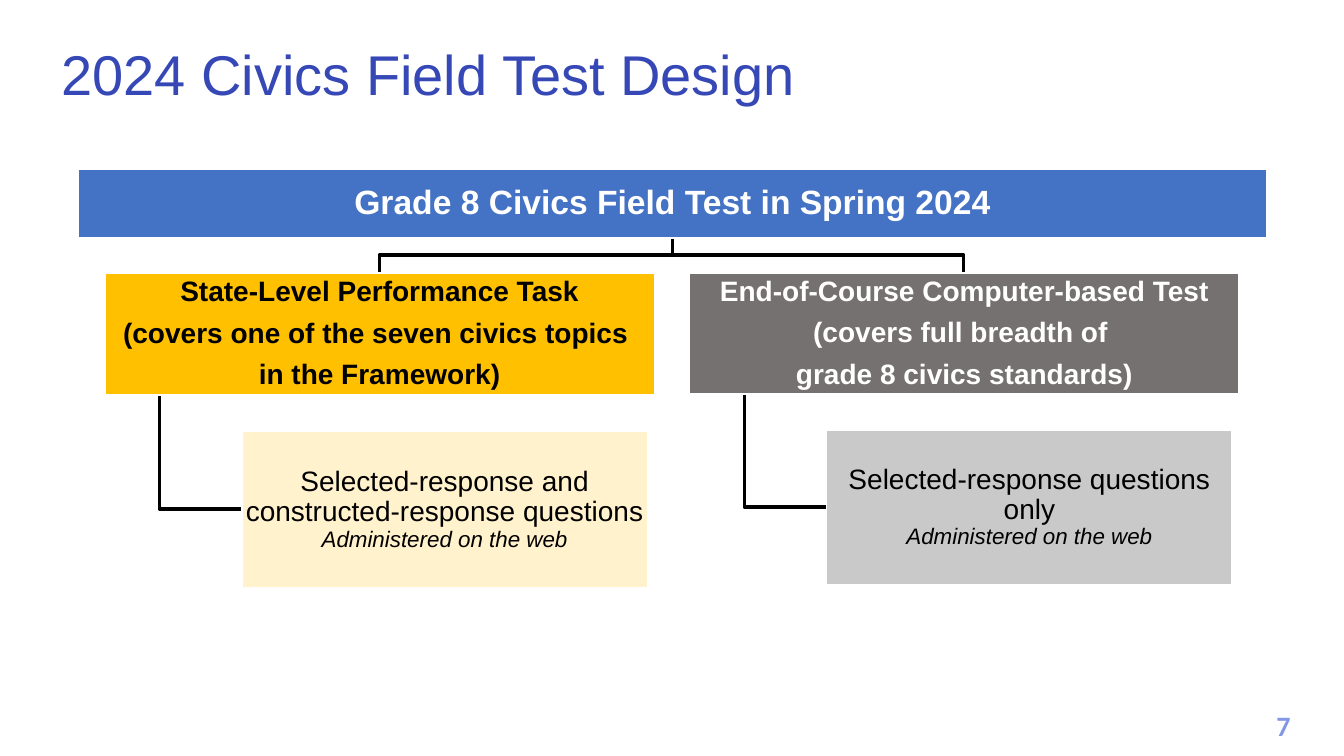
"""Build the slide that shows the design of the 2024 civics field test."""
from dataclasses import dataclass

from pptx import Presentation
from pptx.dml.color import RGBColor
from pptx.enum.shapes import MSO_SHAPE
from pptx.enum.text import MSO_ANCHOR, PP_ALIGN
from pptx.slide import Slide
from pptx.text.text import TextFrame
from pptx.util import Pt

PX = 9144
RECTANGLE = MSO_SHAPE.RECTANGLE
MIDDLE, BOTTOM, TOP = MSO_ANCHOR.MIDDLE, MSO_ANCHOR.BOTTOM, MSO_ANCHOR.TOP
LEFT, CENTER = PP_ALIGN.LEFT, PP_ALIGN.CENTER

BLACK = RGBColor(0x00, 0x00, 0x00)
WHITE = RGBColor(0xFF, 0xFF, 0xFF)
INDIGO = RGBColor(0x36, 0x47, 0xB6)
PERIWINKLE = RGBColor(0x83, 0x97, 0xE7)
BLUE = RGBColor(0x44, 0x72, 0xC4)
GOLD = RGBColor(0xFF, 0xC0, 0x00)
CREAM = RGBColor(0xFF, 0xF2, 0xCC)
DARK_GRAY = RGBColor(0x76, 0x71, 0x71)
LIGHT_GRAY = RGBColor(0xC9, 0xC9, 0xC9)


@dataclass(frozen=True)
class TextStyle:
    """Look of a block of text."""
    size: int
    color: RGBColor
    bold: bool = False
    font: str = "Arial"
    align: PP_ALIGN = CENTER
    line_spacing: float = 0.9


@dataclass(frozen=True)
class Box:
    """Filled box with its text; a line break starts a smaller italic note."""
    left: int
    top: int
    width: int
    height: int
    fill: RGBColor
    text: str
    style: TextStyle
    inset: int = 1


@dataclass(frozen=True)
class Label:
    """Free-standing text."""
    left: int
    top: int
    width: int
    height: int
    text: str
    style: TextStyle
    anchor: MSO_ANCHOR


@dataclass(frozen=True)
class Branch:
    """One test component and the format of its questions."""
    left: int
    height: int
    fill: RGBColor
    heading: str
    heading_color: RGBColor
    detail_height: int
    detail_fill: RGBColor
    detail: str


ROOT = Box(78, 168, 1178, 68, BLUE, "Grade 8 Civics Field Test in Spring 2024",
           TextStyle(24, WHITE, bold=True), inset=2)
ROOT_CENTER = ROOT.left + ROOT.width // 2
BRANCH_TOP, BRANCH_WIDTH = 271, 545
DETAIL_GAP, DETAIL_INDENT, DETAIL_WIDTH = 36, 136, 402
STEM_INDENT = 54

BRANCHES = [
    Branch(104, 121, GOLD,
           "State-Level Performance Task\n(covers one of the seven civics topics \nin the Framework)",
           BLACK, 155, CREAM,
           "Selected-response and constructed-response questions\vAdministered on the web"),
    Branch(684, 120, DARK_GRAY,
           "End-of-Course Computer-based Test\n(covers full breadth of \ngrade 8 civics standards)",
           WHITE, 153, LIGHT_GRAY,
           "Selected-response questions only\vAdministered on the web"),
]

LABELS = [
    Label(1242, 698, 62, 44, "7",
          TextStyle(20, PERIWINKLE, bold=True, font="Calibri", line_spacing=1.0), TOP),
    Label(51, 24, 1202, 88, "2024 Civics Field Test Design",
          TextStyle(40, INDIGO, align=LEFT), BOTTOM),
]


def write_text(frame: TextFrame, text: str, style: TextStyle, anchor: MSO_ANCHOR) -> None:
    """Fill a text frame and format its runs."""
    frame.word_wrap = True
    frame.vertical_anchor = anchor
    frame.text = text
    for paragraph in frame.paragraphs:
        paragraph.alignment = style.align
        paragraph.line_spacing = style.line_spacing
        paragraph.space_after = Pt(8)
        for index, run in enumerate(paragraph.runs):
            is_note = index > 0
            run.font.name = style.font
            run.font.size = Pt(16 if is_note else style.size)
            run.font.bold = style.bold
            run.font.italic = is_note
            run.font.color.rgb = style.color


def add_label(slide: Slide, label: Label) -> None:
    """Add a text box."""
    shape = slide.shapes.add_textbox(
        label.left * PX, label.top * PX, label.width * PX, label.height * PX)
    write_text(shape.text_frame, label.text, label.style, label.anchor)


def add_box(slide: Slide, box: Box) -> None:
    """Add a filled rectangle with centred text."""
    shape = slide.shapes.add_shape(
        RECTANGLE, box.left * PX, box.top * PX, box.width * PX, box.height * PX)
    shape.shadow.inherit = False
    shape.fill.solid()
    shape.fill.fore_color.rgb = box.fill
    shape.line.color.rgb = WHITE
    shape.line.width = Pt(1)
    frame = shape.text_frame
    frame.margin_left = frame.margin_right = box.inset * PX
    frame.margin_top = frame.margin_bottom = box.inset * PX
    write_text(frame, box.text, box.style, MIDDLE)


def add_elbow(slide: Slide, points: list[tuple[int, int]]) -> None:
    """Add an open black line through the points."""
    builder = slide.shapes.build_freeform(*points[0], scale=PX)
    builder.add_line_segments(points[1:], close=False)
    shape = builder.convert_to_shape()
    shape.shadow.inherit = False
    shape.fill.background()
    shape.line.color.rgb = BLACK
    shape.line.width = Pt(2.25)


def add_branch(slide: Slide, branch: Branch) -> None:
    """Add a component, its question format and the lines that lead to them."""
    bottom = BRANCH_TOP + branch.height
    center = branch.left + BRANCH_WIDTH // 2
    stem = branch.left + STEM_INDENT
    detail_left = branch.left + DETAIL_INDENT
    detail_top = bottom + DETAIL_GAP
    detail_middle = detail_top + branch.detail_height // 2
    root_bottom = ROOT.top + ROOT.height
    bar = (root_bottom + BRANCH_TOP) // 2
    add_elbow(slide, [(ROOT_CENTER, root_bottom), (ROOT_CENTER, bar),
                      (center, bar), (center, BRANCH_TOP)])
    add_elbow(slide, [(stem, bottom), (stem, detail_middle), (detail_left, detail_middle)])
    add_box(slide, Box(branch.left, BRANCH_TOP, BRANCH_WIDTH, branch.height, branch.fill,
                       branch.heading, TextStyle(20, branch.heading_color, bold=True)))
    add_box(slide, Box(detail_left, detail_top, DETAIL_WIDTH, branch.detail_height,
                       branch.detail_fill, branch.detail, TextStyle(20, BLACK)))


def main() -> None:
    """Build and save the presentation."""
    presentation = Presentation()
    presentation.slide_width = 1333 * PX
    presentation.slide_height = 750 * PX
    slide = presentation.slides.add_slide(presentation.slide_layouts[6])
    for label in LABELS:
        add_label(slide, label)
    for branch in BRANCHES:
        add_branch(slide, branch)
    add_box(slide, ROOT)
    presentation.save("out.pptx")


if __name__ == "__main__":
    main()
